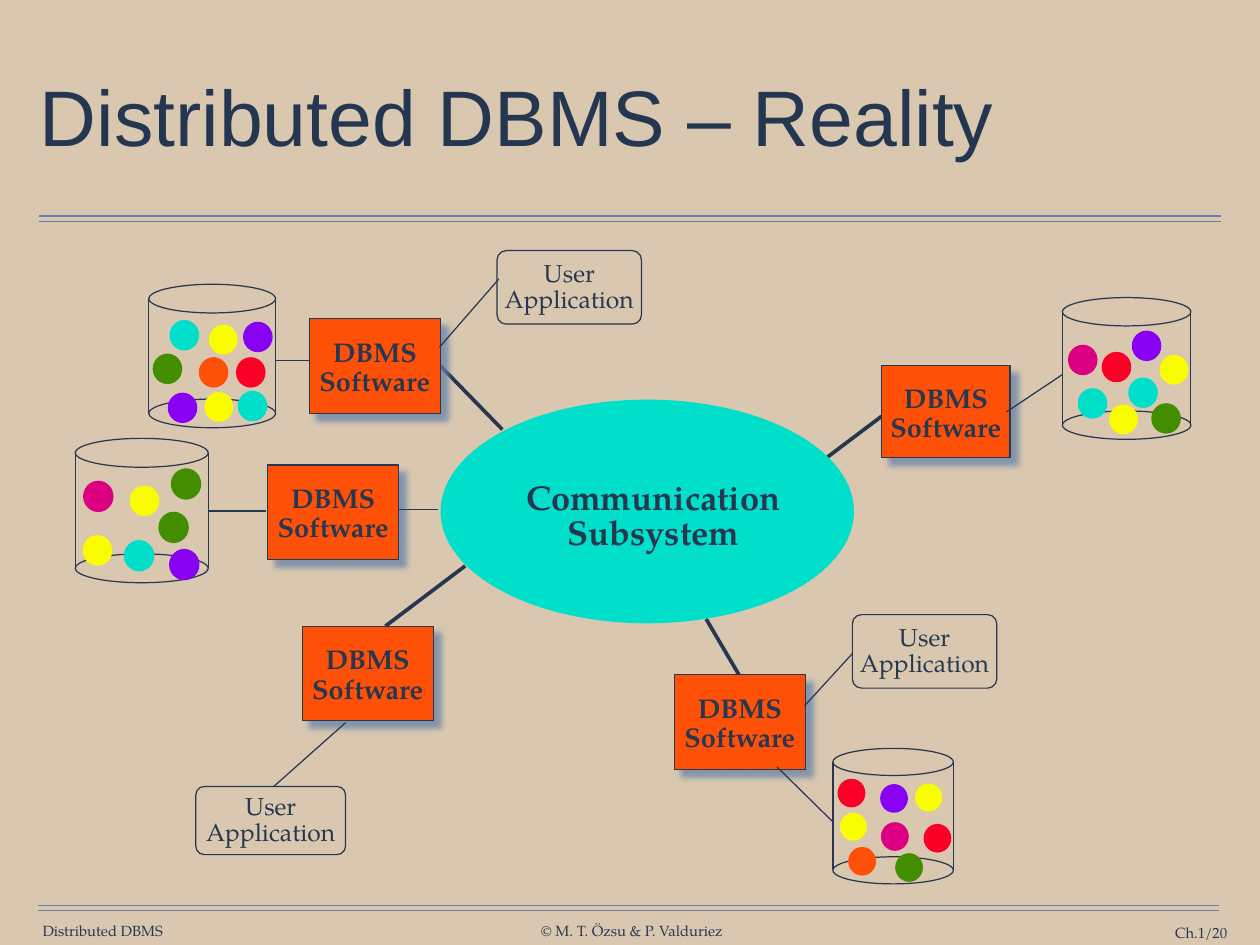
import pptx
import pptx.util
import pptx.dml.color
import pptx.enum.shapes
import pptx.enum.text
import pptx.oxml
import pptx.oxml.ns

COLS, ROWS = 14.22, 10.67
SERIF, SANS = "TeX Gyre Pagella", "Arial"
HEX = {
    "sand": "D9C8AF", "ink": "263750", "title": "253750", "rule": "6682AA",
    "teal": "00DFCA", "yellow": "FAFD00", "green": "438E00", "pink": "DC0081",
    "violet": "8901F3", "red": "FC0128", "orange": "FF5008",
}
KIND = pptx.enum.shapes.MSO_SHAPE
ALIGN = pptx.enum.text.PP_ALIGN
MIDDLE = pptx.enum.text.MSO_ANCHOR.MIDDLE

DRUMS = [
    ((0.85, 4.95, 1.5, 1.63), 0.33, {
        "yellow": [(0.78, 0.7), (0.25, 1.26)],
        "green": [(1.11, 1), (1.25, 0.51)],
        "teal": [(0.72, 1.32)], "pink": [(0.26, 0.65)], "violet": [(1.23, 1.42)]}),
    ((1.68, 3.21, 1.43, 1.62), 0.32, {
        "yellow": [(0.79, 1.38), (0.84, 0.62)], "green": [(0.21, 0.95)],
        "teal": [(1.17, 1.37), (0.4, 0.57)], "red": [(1.15, 0.99)],
        "violet": [(1.23, 0.59), (0.38, 1.39)], "orange": [(0.73, 0.99)]}),
    ((9.4, 8.45, 1.36, 1.53), 0.3, {
        "violet": [(0.69, 0.56)], "green": [(0.86, 1.34)],
        "red": [(0.21, 0.5), (1.18, 1.01)], "pink": [(0.7, 0.99)],
        "orange": [(0.33, 1.27)], "yellow": [(1.08, 0.55), (0.23, 0.88)]}),
    ((11.99, 3.36, 1.45, 1.6), 0.32, {
        "yellow": [(0.69, 1.37), (1.26, 0.81)], "green": [(1.17, 1.36)],
        "teal": [(0.34, 1.19), (0.91, 1.07)], "red": [(0.61, 0.78)],
        "pink": [(0.23, 0.7)], "violet": [(0.95, 0.54)]}),
]
SERVERS = [(7.61, 7.62, 1.48, 1.07), (9.95, 4.13, 1.45, 1.04), (3.41, 7.07, 1.48, 1.07),
           (3.02, 5.25, 1.48, 1.07), (3.49, 3.6, 1.48, 1.07)]
USERS = [(9.62, 6.94, 1.63, 0.83), (2.21, 8.88, 1.69, 0.77), (5.61, 2.83, 1.63, 0.83)]
TRUNKS = [(4.91, 4.07, 5.67, 4.85), (9.34, 5.16, 9.95, 4.7),
          (7.97, 6.99, 8.37, 7.67), (4.35, 7.07, 5.25, 6.39)]
LINKS = [(4.94, 5.75, 4.5, 5.75), (3, 5.77, 2.35, 5.77), (3.12, 4.07, 3.49, 4.07),
         (4.96, 3.92, 5.63, 3.15), (8.77, 8.66, 9.39, 9.27), (9.62, 7.38, 9.08, 7.97),
         (3.9, 8.16, 3.09, 8.88), (11.36, 4.65, 11.99, 4.23)]


def tint(name):
    return pptx.dml.color.RGBColor.from_string(HEX[name])


def place(box):
    return [pptx.util.Inches(v) for v in box]


def line(slide, ends, color="ink", width=1):
    wire = slide.shapes.add_connector(pptx.enum.shapes.MSO_CONNECTOR.STRAIGHT, *place(ends))
    wire.line.color.rgb = tint(color)
    wire.line.width = pptx.util.Pt(width)
    wire._element.spPr.append(pptx.oxml.parse_xml(
        f'<a:effectLst {pptx.oxml.ns.nsdecls("a")}/>'))


def shape(slide, kind, box, fill=None, edge="ink", width=1):
    part = slide.shapes.add_shape(kind, *place(box))
    part.shadow.inherit = False
    if fill:
        part.fill.solid()
        part.fill.fore_color.rgb = tint(fill)
    else:
        part.fill.background()
    part.line.color.rgb = tint(edge)
    part.line.width = pptx.util.Pt(width)
    return part


def write(part, rows, size, bold=False, face=SERIF, color="ink",
          align=ALIGN.CENTER, space=0.9, inset=(0, 0, 0, 0), wrap=False):
    frame = part.text_frame
    frame.word_wrap = wrap
    frame.vertical_anchor = MIDDLE
    (frame.margin_left, frame.margin_top,
     frame.margin_right, frame.margin_bottom) = place(inset)
    frame.text = "\n".join(rows)
    for para in frame.paragraphs:
        para.alignment = align
        para.line_spacing = space
        para.font.size = pptx.util.Pt(size)
        para.font.bold = bold
        para.font.name = face
        para.font.color.rgb = tint(color)


def cast(part):
    glow = part._element.spPr.find(pptx.oxml.ns.qn("a:effectLst"))
    glow.append(pptx.oxml.parse_xml(
        f'<a:outerShdw {pptx.oxml.ns.nsdecls("a")} blurRad="63500" dist="107950" '
        f'dir="2700000" algn="tl" rotWithShape="0"><a:srgbClr val="{HEX["rule"]}">'
        '<a:alpha val="75000"/></a:srgbClr></a:outerShdw>'))


def drum(slide, box, size, dots):
    x, y, w, h = box
    lid = 0.2 * h
    for top in (y, y + h - lid):
        shape(slide, KIND.OVAL, (x, top, w, lid))
    for side in (x, x + w):
        line(slide, (side, y + lid / 2, side, y + h - lid / 2))
    for color, spots in dots.items():
        trim, width = (0.05, 4) if color == "yellow" else (0, 1)
        d = size - trim
        for dx, dy in spots:
            shape(slide, KIND.OVAL, (x + dx - d / 2, y + dy - d / 2, d, d + 0.01),
                  color, color, width)


def server(slide, box):
    part = shape(slide, KIND.RECTANGLE, box, "orange")
    cast(part)
    write(part, ["DBMS", "Software"], 22, bold=True, inset=(0, 0.05, 0, 0))


def user(slide, box):
    part = shape(slide, KIND.ROUNDED_RECTANGLE, box)
    part.adjustments[0] = 0.125
    write(part, ["User", "Application"], 20)


def hub(slide, box):
    part = shape(slide, KIND.OVAL, box, "teal", "teal", 4)
    write(part, ["Communication", "Subsystem"], 28, bold=True, space=0.85,
          inset=(0.14, 0.13, 0, 0))


def head(slide, box):
    part = slide.shapes.add_textbox(*place(box))
    write(part, ["Distributed DBMS – Reality"], 64, face=SANS, color="title",
          align=ALIGN.LEFT, inset=[0.06] * 4, wrap=True)


def rules(slide, x, y, w):
    for top in (y, y + 0.06):
        line(slide, (x, top, x + w, top), "rule")


def foot(slide, x, y):
    notes = [("Distributed DBMS", 0, 0, 1.38, ALIGN.CENTER),
             ("© M. T. Özsu & P. Valduriez", 5.62, 0, 2.08, ALIGN.CENTER),
             ("Ch.1/20", 11.84, 0.02, 1.54, ALIGN.RIGHT)]
    for text, dx, dy, w, align in notes:
        part = slide.shapes.add_textbox(*place((x + dx, y + dy, w, 0.2)))
        write(part, [text], 12, align=align, space=1, wrap=align == ALIGN.RIGHT)


def main():
    deck = pptx.Presentation()
    deck.slide_width, deck.slide_height = place((COLS, ROWS))
    slide = deck.slides.add_slide(deck.slide_layouts[6])
    slide.background.fill.solid()
    slide.background.fill.fore_color.rgb = tint("sand")
    rules(slide, 0.44, 2.44, 13.34)
    rules(slide, 0.43, 10.22, 13.33)
    foot(slide, 0.47, 10.41)
    head(slide, (0.39, 0.49, 13.44, 1.76))
    for ends in TRUNKS:
        line(slide, ends, width=3)
    hub(slide, (5, 4.54, 4.61, 2.47))
    for box, size, dots in DRUMS:
        drum(slide, box, size, dots)
    for box in SERVERS:
        server(slide, box)
    for box in USERS:
        user(slide, box)
    for ends in LINKS:
        line(slide, ends)
    deck.save("out.pptx")


if __name__ == "__main__":
    main()
